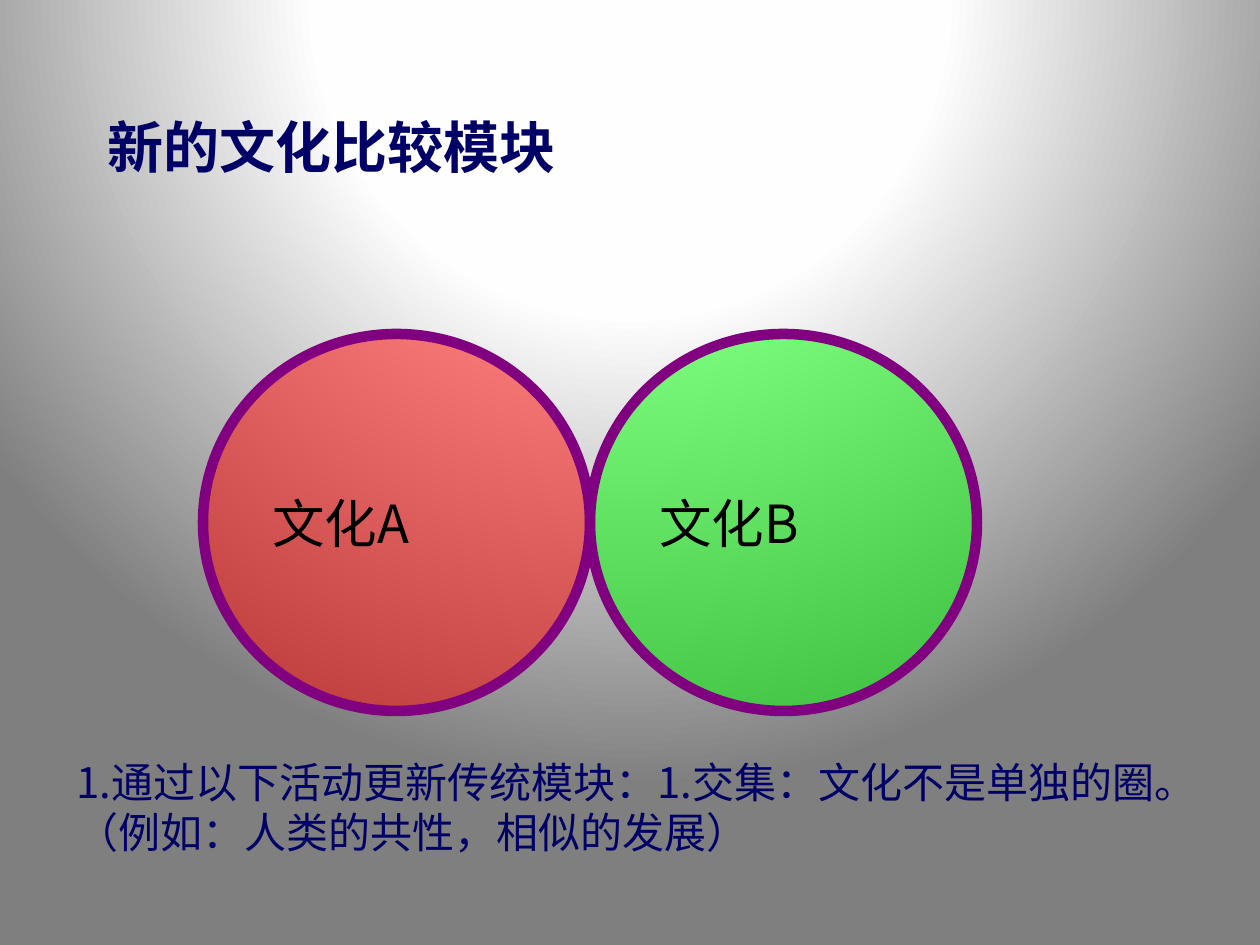
import pptx
import pptx.dml.color
import pptx.enum.shapes
import pptx.enum.text
import pptx.oxml
import pptx.oxml.ns
import pptx.util
from lxml import etree

FONT = "Noto Sans CJK SC"
NAVY = "000066"
TITLE = "新的文化比较模块"
EXPLANATION = "1.通过以下活动更新传统模块：1.交集：文化不是单独的圈。（例如：人类的共性，相似的发展）"
CULTURES = [("文化A", "FF0000"), ("文化B", "00FF00")]
BACKGROUND_STOPS = [(0, "FFFFFF"), (40, "FEFEFE"), (100, "7F7F7F")]

TITLE_BOX = (95, 67, 1121, 158)
EXPLANATION_BOX = (64, 750, 1131, 113)
CIRCLE_LEFT, CIRCLE_TOP, CIRCLE_WIDTH, CIRCLE_HEIGHT = 203, 334, 387, 377
PX = 914400 / 126


def px(value):
    return pptx.util.Emu(round(value * PX))


def color(value):
    return pptx.dml.color.RGBColor.from_string(value)


def place(shape, box):
    shape.left, shape.top, shape.width, shape.height = map(px, box)


def write(shape, text, size, fill, bold=False, anchor="MIDDLE", before=0, spacing=None):
    frame = shape.text_frame
    frame.word_wrap = True
    frame.auto_size = pptx.enum.text.MSO_AUTO_SIZE.NONE
    frame.vertical_anchor = pptx.enum.text.MSO_ANCHOR[anchor]
    paragraph = frame.paragraphs[0]
    paragraph.alignment = pptx.enum.text.PP_ALIGN.LEFT
    paragraph.space_before = pptx.util.Pt(before)
    paragraph.line_spacing = spacing
    run = paragraph.add_run()
    run.text = text
    run.font.size = pptx.util.Pt(size)
    run.font.name = FONT
    run.font.bold = bold
    run.font.color.rgb = color(fill)
    east_asian = etree.SubElement(run.font._element, pptx.oxml.ns.qn("a:ea"))
    east_asian.set("typeface", FONT)


def paint_background(slide):
    slide.background.fill.solid()
    stops = "".join(
        f'<a:gs pos="{position * 1000}"><a:srgbClr val="{value}"/></a:gs>'
        for position, value in BACKGROUND_STOPS
    )
    gradient = pptx.oxml.parse_xml(
        f'<a:gradFill {pptx.oxml.ns.nsdecls("a")} rotWithShape="1"><a:gsLst>{stops}</a:gsLst>'
        '<a:path path="circle"><a:fillToRect l="50000" t="-80000" r="50000" b="180000"/>'
        "</a:path></a:gradFill>"
    )
    properties = slide.element.find(".//" + pptx.oxml.ns.qn("p:bgPr"))
    properties.replace(properties[0], gradient)


def add_circle(slide, box, text, fill):
    circle = slide.shapes.add_shape(pptx.enum.shapes.MSO_SHAPE.OVAL, *map(px, box))
    circle.shadow.inherit = False
    circle.fill.solid()
    circle.fill.fore_color.rgb = color(fill)
    fill_color = circle.element.spPr.find(".//" + pptx.oxml.ns.qn("a:srgbClr"))
    etree.SubElement(fill_color, pptx.oxml.ns.qn("a:alpha")).set("val", "50000")
    circle.line.color.rgb = color("800080")
    circle.line.width = pptx.util.Pt(6)
    write(circle, text, size=30, fill="000000")


def main():
    presentation = pptx.Presentation()
    presentation.slide_width, presentation.slide_height = px(1260), px(945)
    slide = presentation.slides.add_slide(presentation.slide_layouts[5])
    paint_background(slide)

    place(slide.shapes.title, TITLE_BOX)
    write(slide.shapes.title, TITLE, size=32, fill=NAVY, bold=True)

    for index, (text, fill) in enumerate(CULTURES):
        left = CIRCLE_LEFT + index * CIRCLE_WIDTH
        add_circle(slide, (left, CIRCLE_TOP, CIRCLE_WIDTH, CIRCLE_HEIGHT), text, fill)

    explanation = slide.shapes.add_textbox(*map(px, EXPLANATION_BOX))
    write(explanation, EXPLANATION, size=24, fill=NAVY, anchor="TOP", before=12)

    presentation.save("out.pptx")


if __name__ == "__main__":
    main()
